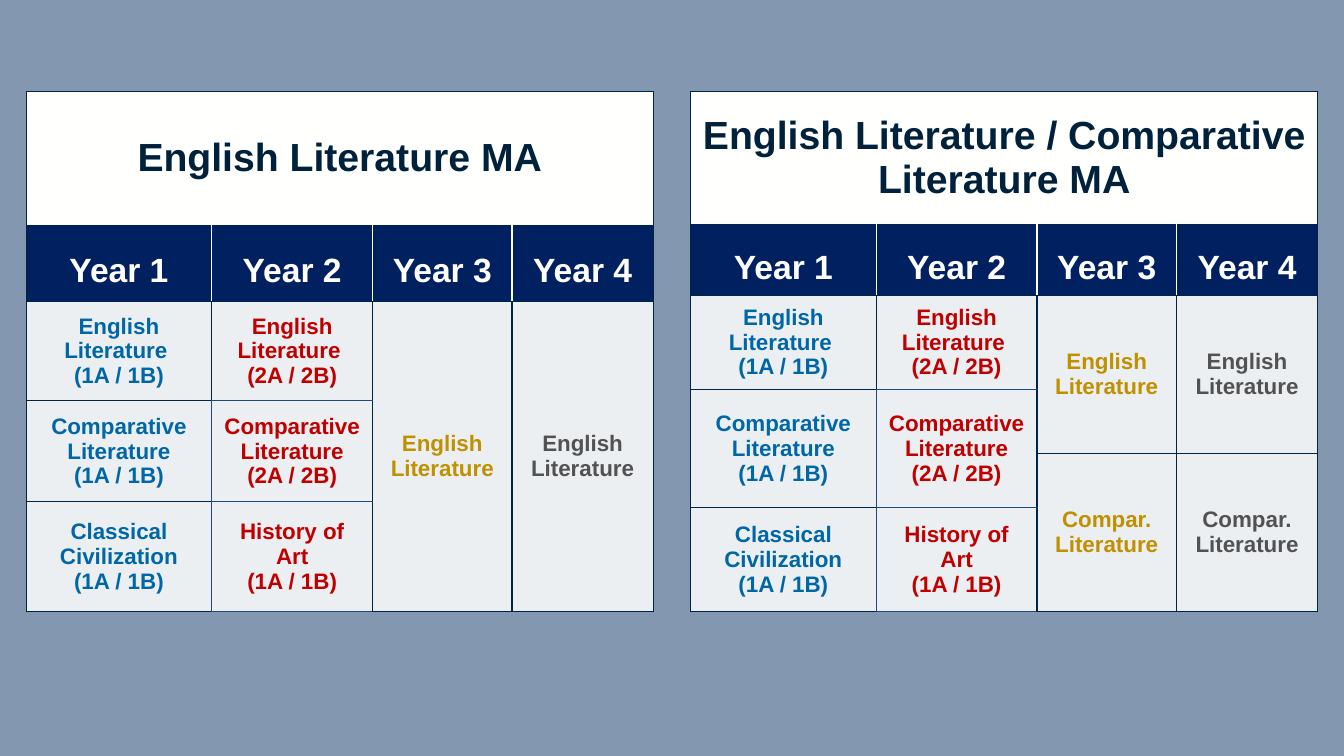
from lxml import etree
from pptx import Presentation
from pptx.dml.color import RGBColor
from pptx.enum.text import MSO_ANCHOR, PP_ALIGN
from pptx.oxml.ns import qn
from pptx.util import Pt

MIDDLE = MSO_ANCHOR.MIDDLE
CENTER = PP_ALIGN.CENTER

COLORS = {
    "background": "8497B0",
    "paper": "FFFFFE",
    "title": "00213B",
    "header": "002060",
    "header_text": "FFFFFF",
    "border": "002542",
    "blue_border": "1F497D",
}
YEAR_COLORS = ["0067A7", "C00000", "BF9000", "525252"]
YEAR_WIDTHS = [132.5, 115, 99.5, 101]
FONT = "Arial"

ENGLISH = ["English Literature"]
COMPARATIVE = ["Compar.", "Literature"]
YEAR_1 = [
    ["English Literature ", "(1A / 1B)"],
    ["Comparative Literature", "(1A / 1B)"],
    ["Classical Civilization", "(1A / 1B)"],
]
YEAR_2 = [
    ["English Literature ", "(2A / 2B)"],
    ["Comparative Literature", "(2A / 2B)"],
    ["History of Art", "(1A / 1B)"],
]


def rgb(name):
    return RGBColor.from_string(COLORS.get(name, name))


def fill_cell(cell, color, opacity=100):
    cell.fill.solid()
    cell.fill.fore_color.rgb = rgb(color)
    if opacity < 100:
        tint = cell._tc.tcPr.find(".//" + qn("a:srgbClr"))
        etree.SubElement(tint, qn("a:alpha"), val=str(opacity * 1000))


def border_cell(cell, **special):
    properties = cell._tc.get_or_add_tcPr()
    for position, side in enumerate("LRTB"):
        line = etree.Element(qn("a:ln" + side), w=str(Pt(1)))
        paint = etree.SubElement(line, qn("a:solidFill"))
        color = COLORS[special.get(side, "border")]
        etree.SubElement(paint, qn("a:srgbClr"), val=color)
        properties.insert(position, line)


def write_cell(cell, lines, size, color, spacing=None):
    cell.vertical_anchor = MIDDLE
    cell.margin_left = cell.margin_right = Pt(8.6)
    cell.margin_top = cell.margin_bottom = Pt(4.3)
    cell.text = "\n".join(lines)
    for paragraph in cell.text_frame.paragraphs:
        paragraph.alignment = CENTER
        if spacing:
            paragraph.line_spacing = spacing
        paragraph.font.name = FONT
        paragraph.font.size = Pt(size)
        paragraph.font.bold = True
        paragraph.font.color.rgb = rgb(color)


def course_borders(year, first_row):
    borders = {}
    if year == 0 and first_row > 2:
        borders["R"] = "blue_border"
    if year == 1:
        borders["B"] = "blue_border"
        if first_row > 2:
            borders.update(L="blue_border", T="blue_border")
    return borders


def add_title_row(table):
    for cell in table.rows[0].cells:
        fill_cell(cell, "paper")
        border_cell(cell)
    table.cell(0, 0).merge(table.cell(0, 3))


def add_year_row(table):
    for year, cell in enumerate(table.rows[1].cells):
        borders = {}
        if year > 0:
            borders["L"] = "paper"
        if year < 3:
            borders["R"] = "paper"
        fill_cell(cell, "header")
        border_cell(cell, **borders)
        write_cell(cell, [f"Year {year + 1}"], 24, "header_text", 1.4)


def add_courses(table, year, courses, spans):
    row = 2
    for lines, span in zip(courses, spans):
        for offset in range(span):
            cell = table.cell(row + offset, year)
            fill_cell(cell, "paper", 85)
            border_cell(cell, **course_borders(year, row))
        top = table.cell(row, year)
        if span > 1:
            top.merge(table.cell(row + span - 1, year))
        write_cell(top, lines, 16, YEAR_COLORS[year])
        row += span


def add_degree(slide, left, top, title, heights, years, spans):
    frame = slide.shapes.add_table(
        len(heights), len(YEAR_WIDTHS), Pt(left), Pt(top),
        Pt(sum(YEAR_WIDTHS)), Pt(sum(heights)))
    table = frame.table
    table.first_row = table.horz_banding = False
    for column, width in zip(table.columns, YEAR_WIDTHS):
        column.width = Pt(width)
    for row, height in zip(table.rows, heights):
        row.height = Pt(height)
    add_title_row(table)
    write_cell(table.cell(0, 0), [title], 28, "title")
    add_year_row(table)
    for year, (courses, year_spans) in enumerate(zip(years, spans)):
        add_courses(table, year, courses, year_spans)


def main():
    deck = Presentation()
    deck.slide_width, deck.slide_height = Pt(960), Pt(540)
    slide = deck.slides.add_slide(deck.slide_layouts[6])
    slide.background.fill.solid()
    slide.background.fill.fore_color.rgb = rgb("background")
    add_degree(
        slide, 18.7, 65.4, "English Literature MA",
        [95.5, 54.5, 71, 72, 78.5],
        [YEAR_1, YEAR_2, [ENGLISH], [ENGLISH]],
        [[1, 1, 1], [1, 1, 1], [3], [3]])
    add_degree(
        slide, 493.3, 65.4, "English Literature / Comparative Literature MA",
        [95, 50.7, 67, 46, 38.5, 74.3],
        [YEAR_1, YEAR_2, [ENGLISH, COMPARATIVE], [ENGLISH, COMPARATIVE]],
        [[1, 2, 1], [1, 2, 1], [2, 2], [2, 2]])
    deck.save("out.pptx")


if __name__ == "__main__":
    main()
